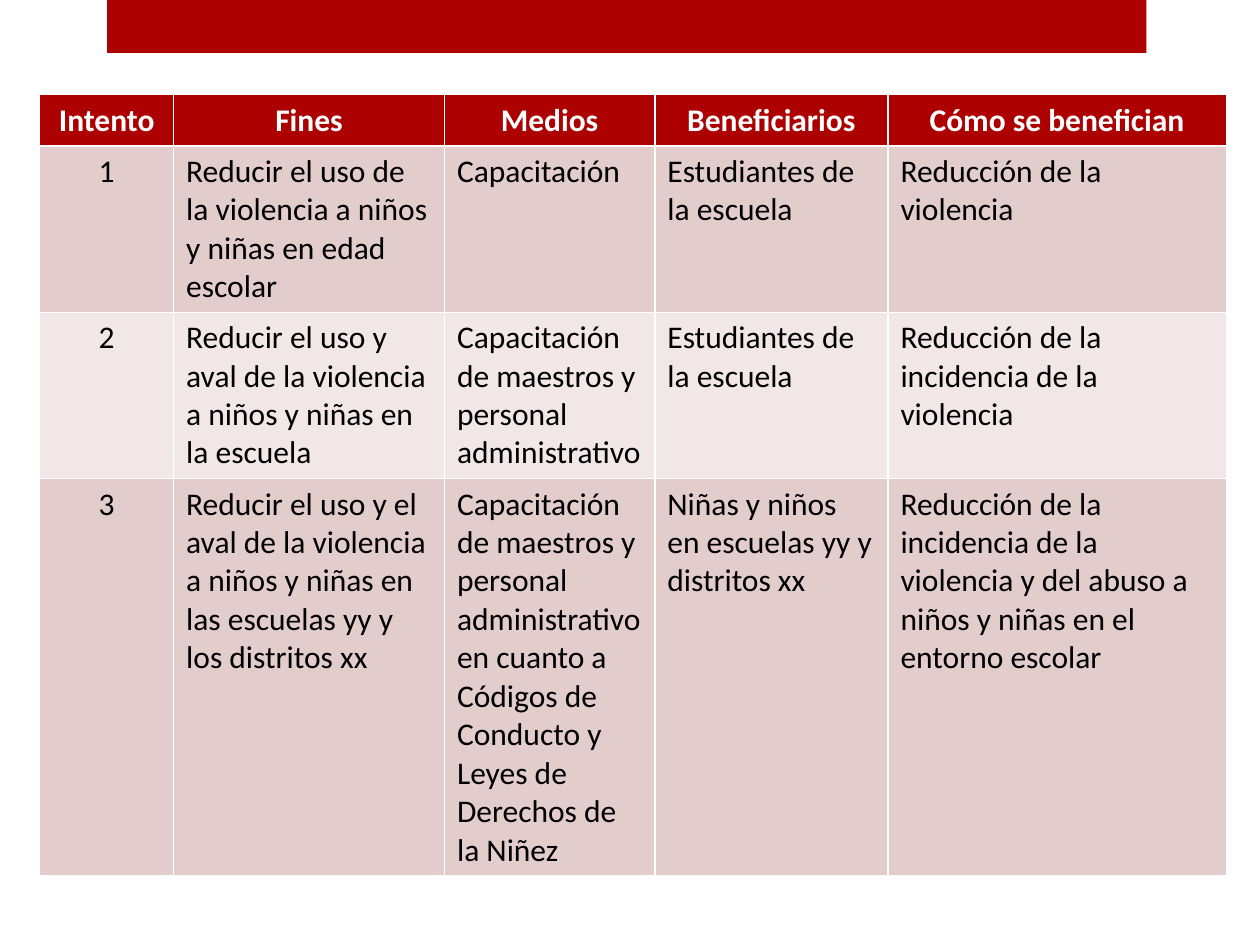
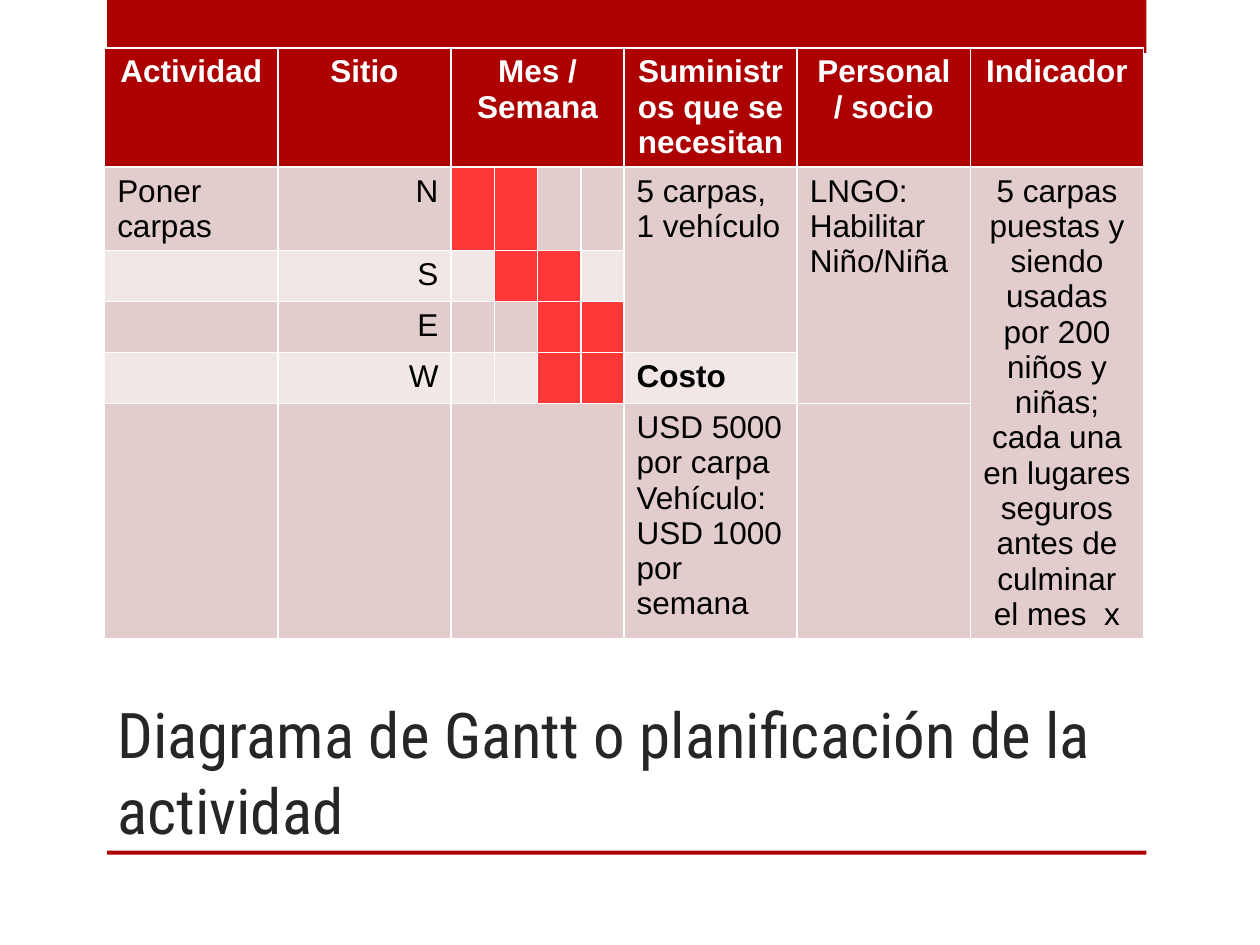
from dataclasses import dataclass

from pptx import Presentation
from pptx.dml.color import RGBColor
from pptx.enum.shapes import MSO_SHAPE
from pptx.enum.text import MSO_ANCHOR, MSO_AUTO_SIZE, PP_ALIGN
from pptx.util import Cm, Pt


@dataclass(frozen=True)
class Theme:
    accent: RGBColor = RGBColor.from_string("AD0101")
    active_week: RGBColor = RGBColor.from_string("FE3737")
    odd_row: RGBColor = RGBColor.from_string("E3CCCC")
    even_row: RGBColor = RGBColor.from_string("F1E7E7")
    title_text: RGBColor = RGBColor.from_string("262626")
    header_text: RGBColor = RGBColor.from_string("FFFFFF")
    cell_text: RGBColor = RGBColor.from_string("000000")
    title_font: str = "Roboto Condensed"
    title_size: Pt = Pt(36)
    table_size: Pt = Pt(18)


LEFT, CENTER, RIGHT = PP_ALIGN.LEFT, PP_ALIGN.CENTER, PP_ALIGN.RIGHT
CONTENT_WIDTH = 20.95


class Deck:
    """Holds the style and the slide being built."""

    def __init__(self, theme):
        self.theme = theme
        self.presentation = Presentation()
        self.presentation.slide_width = Cm(25.4)
        self.presentation.slide_height = Cm(19.05)
        self.layout = self.presentation.slide_layouts[5]
        self.slide = None

    def add_slide(self, title=None):
        self.slide = self.presentation.slides.add_slide(self.layout)
        placeholder = self.slide.shapes.title
        if title is None:
            placeholder.element.getparent().remove(placeholder.element)
            return
        placeholder.left, placeholder.top = Cm(2.11), Cm(12.75)
        placeholder.width, placeholder.height = Cm(21.84), Cm(4.45)
        text_frame = placeholder.text_frame
        text_frame.text = title
        text_frame.auto_size = MSO_AUTO_SIZE.NONE
        text_frame.vertical_anchor = MSO_ANCHOR.BOTTOM
        self.format_text(text_frame, LEFT, self.theme.title_font,
                         self.theme.title_size, self.theme.title_text)

    def add_master_bar(self, top, height):
        """Draw a bar and move it to the master, behind every slide."""
        bar = self.slide.shapes.add_shape(
            MSO_SHAPE.RECTANGLE, Cm(2.16), Cm(top), Cm(CONTENT_WIDTH), Cm(height))
        bar.shadow.inherit = False
        bar.fill.solid()
        bar.fill.fore_color.rgb = self.theme.accent
        bar.line.fill.background()
        self.presentation.slide_master.shapes.element.append(bar.element)

    def format_text(self, text_frame, alignment, font_name, size, color, bold=False):
        for paragraph in text_frame.paragraphs:
            paragraph.alignment = alignment
            for run in paragraph.runs:
                run.font.name = font_name
                run.font.size = size
                run.font.color.rgb = color
                run.font.bold = bold

    def fill_cell(self, cell, color):
        cell.fill.solid()
        cell.fill.fore_color.rgb = color

    def add_table(self, left, top, widths, heights, rows, alignments, font_name):
        """Header row, then banded rows; white rules come from the table style."""
        theme = self.theme
        table = self.slide.shapes.add_table(
            len(heights), len(widths), Cm(left), Cm(top),
            Cm(sum(widths)), Cm(sum(heights))).table
        for column, width in zip(table.columns, widths):
            column.width = Cm(width)
        for table_row, height in zip(table.rows, heights):
            table_row.height = Cm(height)
        for row_index, row in enumerate(rows):
            header = row_index == 0
            band = theme.odd_row if row_index % 2 else theme.even_row
            for column_index, text in enumerate(row):
                cell = table.cell(row_index, column_index)
                self.fill_cell(cell, theme.accent if header else band)
                cell.text_frame.text = text
                self.format_text(
                    cell.text_frame,
                    CENTER if header else alignments[column_index],
                    font_name, theme.table_size,
                    theme.header_text if header else theme.cell_text, header)
        return table


def build_examples(deck):
    deck.add_slide()
    # Shared top band and bottom rule
    deck.add_master_bar(0, 1.07)
    deck.add_master_bar(17.15, 0.08)
    rows = [
        ["Intento", "Fines", "Medios", "Beneficiarios", "Cómo se benefician"],
        ["1", "Reducir el uso de la violencia a niños y niñas en edad escolar",
         "Capacitación", "Estudiantes de la escuela", "Reducción de la violencia"],
        ["2", "Reducir el uso y aval de la violencia a niños y niñas en la escuela",
         "Capacitación de maestros y personal administrativo",
         "Estudiantes de la escuela",
         "Reducción de la incidencia de la violencia"],
        ["3", "Reducir el uso y el aval de la violencia a niños y niñas en las "
              "escuelas yy y los distritos xx",
         "Capacitación de maestros y personal administrativo en cuanto a Códigos "
         "de Conducto y Leyes de Derechos de la Niñez",
         "Niñas y niños en escuelas yy y distritos xx",
         "Reducción de la incidencia de la violencia y del abuso a niños y niñas "
         "en el entorno escolar"],
    ]
    deck.add_table(0.8, 1.91, [2.7, 5.46, 4.24, 4.7, 6.82], [1.03, 3.35, 3.35, 8],
                   rows, [CENTER] + [LEFT] * 4, "Calibri")


def build_gantt(deck):
    deck.add_slide("Diagrama de Gantt o planificación de la actividad")
    weeks = [""] * 4
    rows = [
        ["Actividad", "Sitio", "Mes / Semana", "", "", "",
         "Suministros que se necesitan", "Personal / socio", "Indicador"],
        ["Poner carpas", "N", *weeks, "5 carpas, 1 vehículo",
         "LNGO: Habilitar Niño/Niña",
         "5 carpas puestas y siendo usadas por 200 niños y niñas; cada una en "
         "lugares seguros antes de culminar el mes  x"],
        ["", "S", *weeks, "", "", ""],
        ["", "E", *weeks, "", "", ""],
        ["", "W", *weeks, "Costo", "", ""],
        ["", "", *weeks, "USD 5000 por carpa\nVehículo: USD 1000 por semana", "", ""],
    ]
    wide = CONTENT_WIDTH / 6
    widths = [wide] * 2 + [wide / 4] * 4 + [wide] * 3
    alignments = [LEFT, RIGHT] + [LEFT] * 6 + [CENTER]
    table = deck.add_table(2.11, 0.97, widths, [2.4, 1.67, 1.03, 1.03, 1.03, 4.7],
                           rows, alignments, "Arial")

    # Weeks in which each site is active: first column of two
    for row_index, first_week in enumerate([2, 3, 4, 4], start=1):
        for column_index in (first_week, first_week + 1):
            deck.fill_cell(table.cell(row_index, column_index), deck.theme.active_week)

    # Merged areas: top row, left column, bottom row, right column
    for top, left, bottom, right in [(0, 2, 0, 5), (5, 2, 5, 5), (1, 6, 3, 6),
                                     (1, 7, 4, 7), (1, 8, 5, 8)]:
        table.cell(top, left).merge(table.cell(bottom, right))

    # Cost subheading
    table.cell(4, 6).text_frame.paragraphs[0].runs[0].font.bold = True


def main():
    deck = Deck(Theme())
    build_examples(deck)
    build_gantt(deck)
    deck.presentation.save("out.pptx")


if __name__ == "__main__":
    main()
